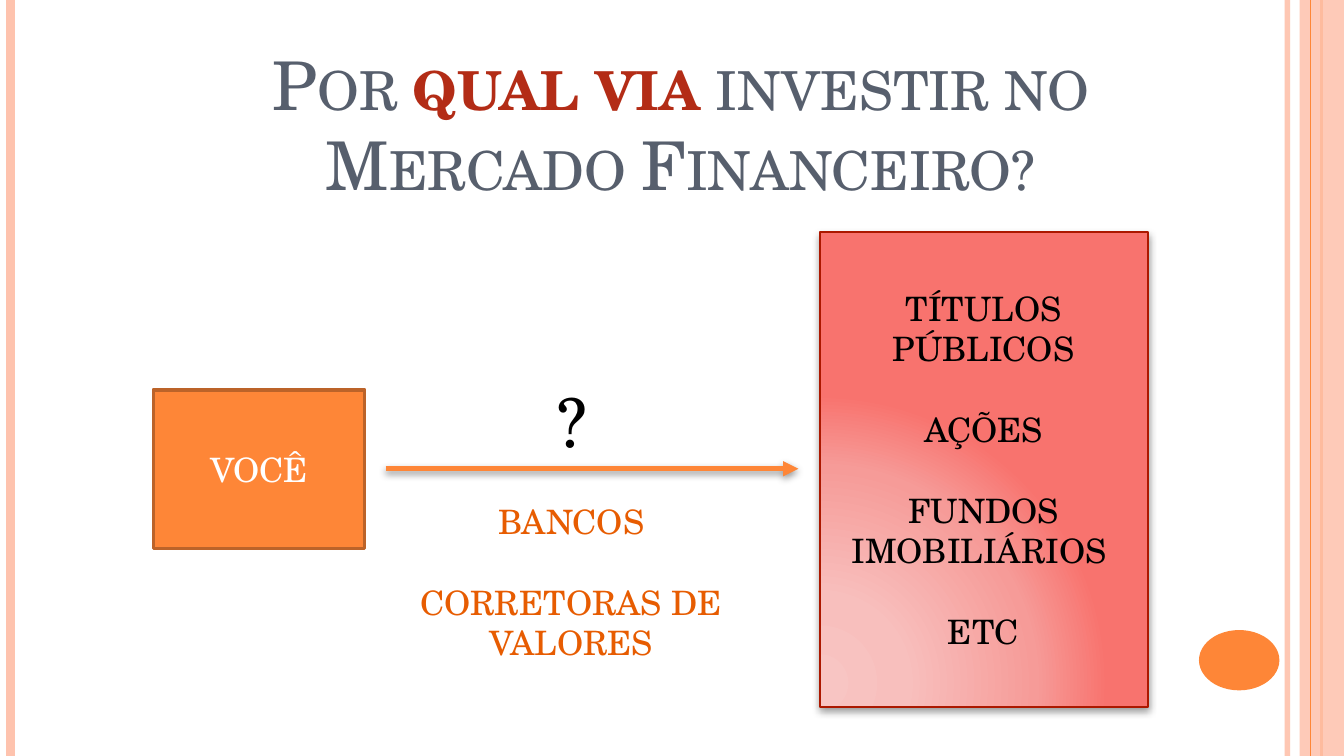
from lxml import etree
from pptx import Presentation
from pptx.dml.color import RGBColor
from pptx.enum.shapes import MSO_CONNECTOR, MSO_SHAPE
from pptx.enum.text import MSO_ANCHOR, PP_ALIGN
from pptx.oxml.ns import qn
from pptx.util import Cm, Pt

STRAIGHT = MSO_CONNECTOR.STRAIGHT
RECTANGLE, OVAL = MSO_SHAPE.RECTANGLE, MSO_SHAPE.OVAL
TOP, MIDDLE, BOTTOM = MSO_ANCHOR.TOP, MSO_ANCHOR.MIDDLE, MSO_ANCHOR.BOTTOM
CENTER = PP_ALIGN.CENTER
FONT = "TeX Gyre Schola"
WIDTH, HEIGHT = 25.4, 14.29
COLORS = {
    "pink": "FEC3AE", "orange": "FE8637", "brown": "BC6329",
    "slate": "575F6D", "red": "B32C16", "dark_red": "AC1800",
    "dark_orange": "E75C01", "black": "000000", "white": "FFFFFF",
}
PRODUCT_STOPS = [(0, "F8C5C3"), (30, "F8BFBD"), (75, "F69B98"), (100, "F8736E")]
PRODUCT_FOCUS = {"l": 5, "t": 100, "r": 120, "b": 10}


def rgb(name):
    """Return the named color."""
    return RGBColor.from_string(COLORS[name])


def add_xml(parent, tag, **attributes):
    """Append a DrawingML element and return it."""
    values = {key: str(value) for key, value in attributes.items()}
    return etree.SubElement(parent, qn(f"a:{tag}"), values)


def set_alpha(fill_parent, percent):
    """Make the solid color below an element partly transparent."""
    color = fill_parent.find(f".//{qn('a:srgbClr')}")
    add_xml(color, "alpha", val=percent * 1000)


def add_shadow(effects, alpha, distance):
    """Put a soft downward shadow into an effect list."""
    shadow = add_xml(effects, "outerShdw", blurRad=Pt(4), dist=Pt(distance),
                     dir=90 * 60000, rotWithShape=0)
    color = add_xml(shadow, "srgbClr", val=COLORS["black"])
    add_xml(color, "alpha", val=alpha * 1000)


def add_line(slide, start, end, color, width):
    """Draw a straight line without a shadow."""
    line = slide.shapes.add_connector(STRAIGHT, *map(Cm, start + end))
    line.line.color.rgb = rgb(color)
    line.line.width = Pt(width)
    add_xml(line._element.spPr, "effectLst")
    return line


def add_arrow(slide, start, end, color, width):
    """Draw a shadowed line with a triangle at its end."""
    arrow = add_line(slide, start, end, color, width)
    properties = arrow._element.spPr
    add_xml(properties.find(qn("a:ln")), "tailEnd", type="triangle")
    add_shadow(properties.find(qn("a:effectLst")), 42, 1.6)


def add_box(slide, kind, box, fill, outline=None, width=1):
    """Draw a filled shape with an optional outline."""
    shape = slide.shapes.add_shape(kind, *map(Cm, box))
    shape.shadow.inherit = False
    shape.fill.solid()
    shape.fill.fore_color.rgb = rgb(fill)
    if outline:
        shape.line.color.rgb = rgb(outline)
        shape.line.width = Pt(width)
    else:
        shape.line.fill.background()
    return shape


def set_radial_gradient(shape, stops, focus):
    """Replace the solid fill by a circular gradient."""
    solid = shape._element.spPr.find(qn("a:solidFill"))
    gradient = etree.Element(qn("a:gradFill"), rotWithShape="1")
    stop_list = add_xml(gradient, "gsLst")
    for position, color in stops:
        stop = add_xml(stop_list, "gs", pos=position * 1000)
        add_xml(stop, "srgbClr", val=color)
    circle = add_xml(gradient, "path", path="circle")
    add_xml(circle, "fillToRect",
            **{side: percent * 1000 for side, percent in focus.items()})
    solid.getparent().replace(solid, gradient)


def format_run(run, color, size):
    """Set the font, size and color of a run."""
    run.font.name = FONT
    run.font.size = Pt(size)
    run.font.color.rgb = rgb(color)


def set_text(shape, lines, color, size=18, anchor=MIDDLE):
    """Write centered paragraphs one line of space apart."""
    frame = shape.text_frame
    frame.word_wrap = True
    frame.vertical_anchor = anchor
    frame.text = "\n".join(lines)
    for index, paragraph in enumerate(frame.paragraphs):
        paragraph.alignment = CENTER
        paragraph.space_before = Pt(1.2 * size if index else 0)
        for run in paragraph.runs:
            format_run(run, color, size)


def add_label(slide, box, lines, color, size=18):
    """Add a text box filled from the top."""
    label = slide.shapes.add_textbox(*map(Cm, box))
    set_text(label, lines, color, size, TOP)


def add_title(slide, box, parts):
    """Add the small-caps title from text, color and bold parts."""
    frame = slide.shapes.add_textbox(*map(Cm, box)).text_frame
    frame.word_wrap = True
    frame.vertical_anchor = BOTTOM
    paragraph = frame.paragraphs[0]
    paragraph.alignment = CENTER
    for text, color, bold in parts:
        run = paragraph.add_run()
        run.text = text
        format_run(run, color, 36)
        run.font.bold = bold
        run.font._element.set("cap", "small")


def add_side_stripes(slide):
    """Draw the bands along both edges and the corner oval."""
    def stripe(x, color, width):
        """Draw one line from top to bottom of the slide."""
        return add_line(slide, (x, 0), (x, HEIGHT), color, width)

    set_alpha(stripe(24.33, "pink", 3)._element.spPr, 93)
    stripe(0.2, "pink", 4.5)
    stripe(24.97, "orange", 1.5)
    band = add_box(slide, RECTANGLE, (24.56, 0, 0.84, HEIGHT), "pink")
    set_alpha(band._element.spPr, 87)
    stripe(24.77, "orange", 0.75)
    add_box(slide, OVAL, (22.66, 11.91, 1.52, 1.14), "orange")


def main():
    """Build the slide and save it."""
    presentation = Presentation()
    presentation.slide_width, presentation.slide_height = Cm(WIDTH), Cm(HEIGHT)
    slide = presentation.slides.add_slide(presentation.slide_layouts[6])
    add_side_stripes(slide)
    add_title(slide, (2.49, 0.94, 20.75, 3.05), [
        ("Por ", "slate", False),
        ("qual via ", "red", True),
        ("investir no Mercado Financeiro?", "slate", False),
    ])

    investor = add_box(slide, RECTANGLE, (2.9, 7.37, 3.99, 3), "orange", "brown", 2)
    set_text(investor, ["VOCÊ"], "white")

    products = add_box(slide, RECTANGLE, (15.49, 4.39, 6.2, 8.97), "pink", "dark_red")
    set_radial_gradient(products, PRODUCT_STOPS, PRODUCT_FOCUS)
    add_shadow(products._element.spPr.find(qn("a:effectLst")), 40, 2)
    set_text(products, ["TÍTULOS PÚBLICOS", "AÇÕES", "FUNDOS IMOBILIÁRIOS ", "ETC"], "black")

    add_arrow(slide, (7.29, 8.86), (15.09, 8.86), "orange", 2.75)
    add_label(slide, (9.91, 7.06, 1.8, 1.8), ["?"], "black", 36)
    add_label(slide, (7.39, 9.35, 6.81, 3.33),
              ["BANCOS", "CORRETORAS DE VALORES"], "dark_orange")
    presentation.save("out.pptx")


if __name__ == "__main__":
    main()
